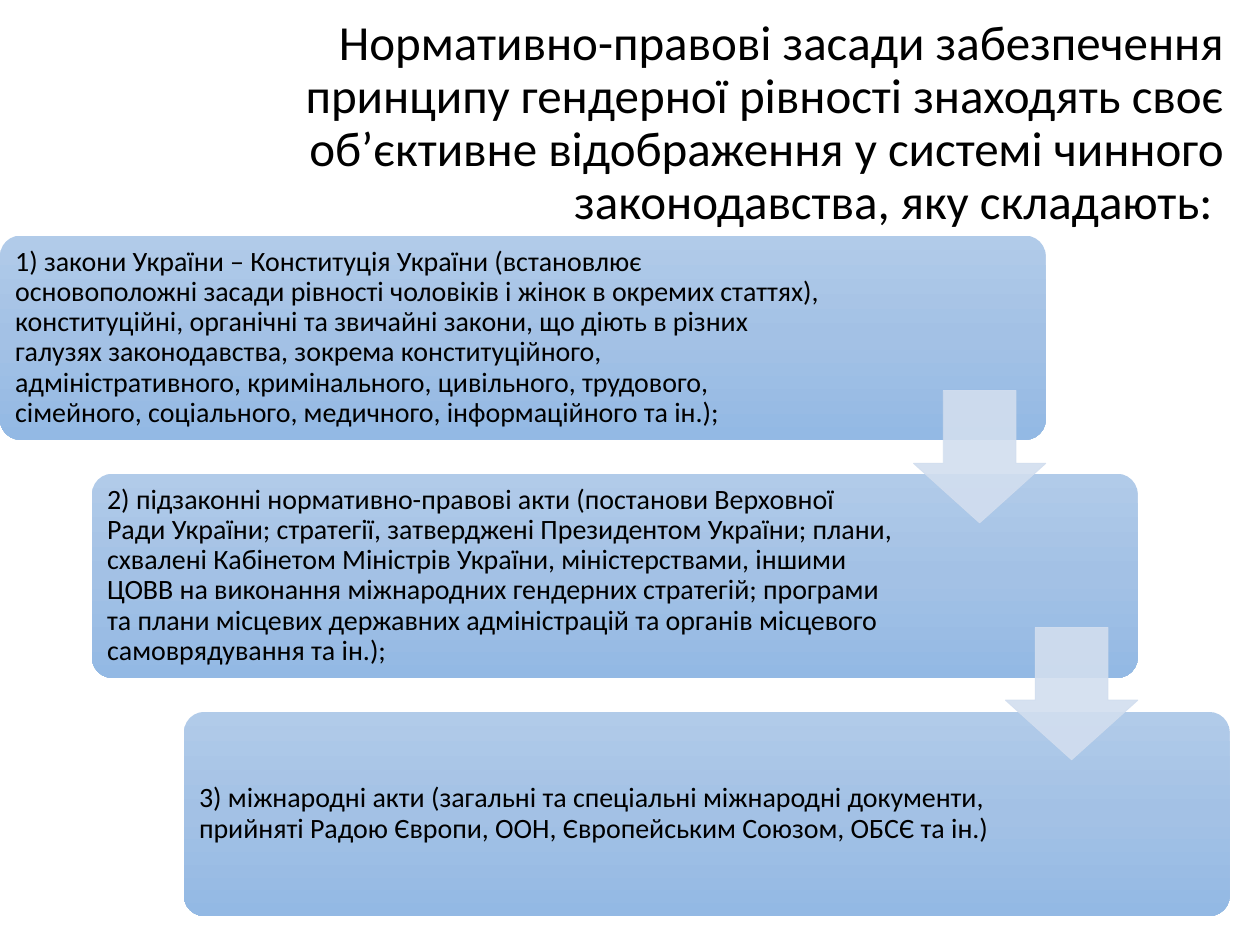
from copy import deepcopy
from lxml import etree
from pptx import Presentation
from pptx.dml.color import RGBColor
from pptx.enum import shapes, text
from pptx.oxml.ns import qn
from pptx.util import Inches, Pt

COLORS = {
    "text": "000000",
    "step_top": "B1CBE9",
    "step_middle": "A3C1E5",
    "step_bottom": "93B9E4",
    "arrow": "D2DEEF",
}
FONT = "Calibri"
TITLE = (
    "Нормативно-правові засади забезпечення принципу гендерної рівності "
    "знаходять своє об’єктивне відображення у системі чинного законодавства, "
    "яку складають: "
)
LEGAL_ACTS = [
    "1) закони України – Конституція України (встановлює основоположні засади "
    "рівності чоловіків і жінок в окремих статтях), конституційні, органічні та "
    "звичайні закони, що діють в різних галузях законодавства, зокрема "
    "конституційного, адміністративного, кримінального, цивільного, трудового, "
    "сімейного, соціального, медичного, інформаційного та ін.);",
    "2) підзаконні нормативно-правові акти (постанови Верховної Ради України; "
    "стратегії, затверджені Президентом України; плани, схвалені Кабінетом "
    "Міністрів України, міністерствами, іншими ЦОВВ на виконання міжнародних "
    "гендерних стратегій; програми та плани місцевих державних адміністрацій та "
    "органів місцевого самоврядування та ін.);",
    "3) міжнародні акти (загальні та спеціальні міжнародні документи, прийняті "
    "Радою Європи, ООН, Європейським Союзом, ОБСЄ та ін.)",
]
TEXT_WIDTHS = [6.55, 6.42, 6.42]
ARROW_DROPS = [1.23, 1.22]


def rgb(name):
    return RGBColor.from_string(COLORS[name])


def inches(box):
    return [Inches(length) for length in box]


def write(frame, wording, size, align):
    frame.word_wrap = True
    frame.auto_size = text.MSO_AUTO_SIZE.NONE
    frame.vertical_anchor = text.MSO_ANCHOR.MIDDLE
    frame.text = wording
    paragraph = frame.paragraphs[0]
    paragraph.alignment = align
    paragraph.line_spacing = 0.9
    paragraph.font.name = FONT
    paragraph.font.size = Pt(size)
    paragraph.font.color.rgb = rgb("text")


def place_title(slide, box):
    title = slide.shapes.title
    title.left, title.top, title.width, title.height = inches(box)
    write(title.text_frame, TITLE, 28, text.PP_ALIGN.RIGHT)


def fill_step(step):
    step.fill.gradient()
    step.fill.gradient_angle = 270
    stop_list = step.fill._xPr.find(qn("a:gradFill")).find(qn("a:gsLst"))
    stop_list.insert(1, deepcopy(stop_list[0]))
    names = ["step_top", "step_middle", "step_bottom"]
    for index, (stop, name) in enumerate(zip(step.fill.gradient_stops, names)):
        stop.position = index / 2
        stop.color.rgb = rgb(name)


def add_step(parts, box, wording, text_width):
    left, top, width, height = box
    step = parts.add_shape(shapes.MSO_SHAPE.ROUNDED_RECTANGLE, *inches(box))
    step.adjustments[0] = 0.1
    step.shadow.inherit = False
    step.line.fill.background()
    fill_step(step)

    inner = (left + 0.05, top + 0.05, text_width, height - 0.1)
    frame = parts.add_textbox(*inches(inner)).text_frame
    frame.margin_left = frame.margin_right = Inches(0.07)
    frame.margin_top = frame.margin_bottom = Inches(0.07)
    write(frame, wording, 16, text.PP_ALIGN.LEFT)


def add_arrow(parts, box):
    arrow = parts.add_shape(shapes.MSO_SHAPE.DOWN_ARROW, *inches(box))
    arrow.adjustments[0] = 0.55
    arrow.adjustments[1] = 0.45
    arrow.shadow.inherit = False
    arrow.fill.solid()
    arrow.line.width = Pt(0.5)
    for paint in (arrow.fill, arrow.line.fill):
        paint.solid()
        paint.fore_color.rgb = rgb("arrow")
    for color in arrow._element.spPr.iter(qn("a:srgbClr")):
        etree.SubElement(color, qn("a:alpha")).set("val", "90000")


def place_staircase(slide, box):
    left, top, width, height = box
    step_width, step_height, arrow_size = 8.3, 1.62, 1.05
    gaps = len(LEGAL_ACTS) - 1
    shift = (width - step_width) / gaps
    drop = (height - step_height) / gaps
    parts = slide.shapes.add_group_shape().shapes

    for index, (wording, text_width) in enumerate(zip(LEGAL_ACTS, TEXT_WIDTHS)):
        step = (left + index * shift, top + index * drop, step_width, step_height)
        add_step(parts, step, wording, text_width)

    for index, arrow_drop in enumerate(ARROW_DROPS):
        arrow_left = left + index * shift + step_width - arrow_size
        arrow_top = top + index * drop + arrow_drop
        add_arrow(parts, (arrow_left, arrow_top, arrow_size, arrow_size))


def main():
    deck = Presentation()
    deck.slide_width, deck.slide_height = Inches(10), Inches(7.5)
    slide = deck.slides.add_slide(deck.slide_layouts[5])
    place_title(slide, (1.51, 0.26, 8.3, 1.45))
    place_staircase(slide, (0, 1.87, 9.76, 5.4))
    deck.save("out.pptx")


if __name__ == "__main__":
    main()
